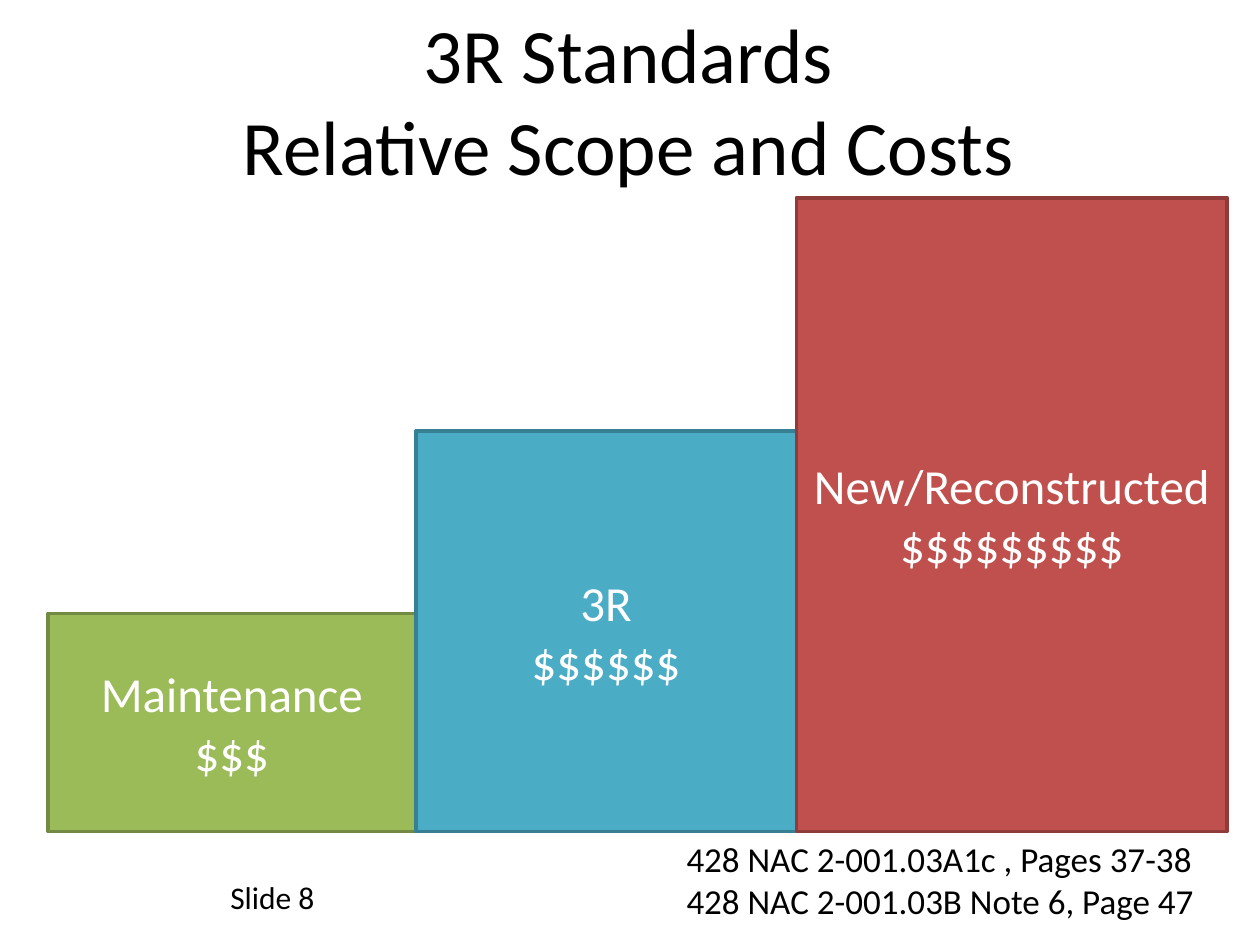
from dataclasses import dataclass

from pptx import Presentation
from pptx.dml.color import RGBColor
from pptx.enum.shapes import MSO_SHAPE
from pptx.enum.text import MSO_ANCHOR, MSO_AUTO_SIZE, PP_ALIGN
from pptx.util import Inches, Pt

RECT = MSO_SHAPE.RECTANGLE
MIDDLE, TOP = MSO_ANCHOR.MIDDLE, MSO_ANCHOR.TOP
CENTER, LEFT = PP_ALIGN.CENTER, PP_ALIGN.LEFT
NO_FIT, GROW = MSO_AUTO_SIZE.NONE, MSO_AUTO_SIZE.SHAPE_TO_FIT_TEXT

BLACK = RGBColor(0x00, 0x00, 0x00)
WHITE = RGBColor(0xFF, 0xFF, 0xFF)
GREEN = RGBColor(0x9B, 0xBB, 0x59)
DARK_GREEN = RGBColor(0x73, 0x8A, 0x42)
TEAL = RGBColor(0x4B, 0xAC, 0xC6)
DARK_TEAL = RGBColor(0x37, 0x7F, 0x92)
RED = RGBColor(0xC0, 0x50, 0x4D)
DARK_RED = RGBColor(0x8E, 0x3B, 0x39)

FONT = "Calibri"
BARS_LEFT = 0.38
BASELINE = 6.6


@dataclass
class Bar:
    label: str
    dollars: int
    width: float
    height: float
    fill: RGBColor
    line: RGBColor


@dataclass
class Note:
    text: str
    left: float
    top: float
    width: float
    height: float
    size: int


BARS = [
    Bar("Maintenance", 3, 2.92, 1.73, GREEN, DARK_GREEN),
    Bar("3R", 6, 3.02, 3.18, TEAL, DARK_TEAL),
    Bar("New/Reconstructed", 9, 3.42, 5.03, RED, DARK_RED),
]
NOTES = [
    Note("Slide 8", 1.73, 6.92, 1.24, 0.4, 18),
    Note("428 NAC 2-001.03A1c , Pages 37-38\n428 NAC 2-001.03B Note 6, Page 47",
         5.35, 6.6, 4.65, 0.77, 20),
]


def write(sp, text: str, *, size: int, color: RGBColor = BLACK,
          align=LEFT, anchor=TOP, fit=NO_FIT) -> None:
    tf = sp.text_frame
    tf.word_wrap = True
    tf.auto_size = fit
    tf.vertical_anchor = anchor
    tf.text = text
    for p in tf.paragraphs:
        p.alignment = align
        p.font.size = Pt(size)
        for r in p.runs:
            r.font.name = FONT
            r.font.size = Pt(size)
            r.font.color.rgb = color


def add_title(s, text: str) -> None:
    sp = s.shapes.title
    sp.left, sp.top = Inches(0.25), Inches(0)
    sp.width, sp.height = Inches(9.48), Inches(1.57)
    write(sp, text, size=44, align=CENTER, anchor=MIDDLE)


def add_bar(s, bar: Bar, left: float) -> None:
    sp = s.shapes.add_shape(RECT, Inches(left), Inches(BASELINE - bar.height),
                            Inches(bar.width), Inches(bar.height))
    sp.shadow.inherit = False
    sp.fill.solid()
    sp.fill.fore_color.rgb = bar.fill
    sp.line.color.rgb = bar.line
    sp.line.width = Pt(2)
    write(sp, f"{bar.label}\n{'$' * bar.dollars}", size=28, color=WHITE,
          align=CENTER, anchor=MIDDLE)


def add_note(s, note: Note) -> None:
    sp = s.shapes.add_textbox(Inches(note.left), Inches(note.top),
                              Inches(note.width), Inches(note.height))
    write(sp, note.text, size=note.size, fit=GROW)


def main() -> None:
    prs = Presentation()
    prs.slide_width, prs.slide_height = Inches(10), Inches(7.5)
    s = prs.slides.add_slide(prs.slide_layouts.get_by_name("Title Only"))
    add_title(s, "3R Standards\vRelative Scope and Costs")
    left = BARS_LEFT
    for bar in BARS:
        add_bar(s, bar, left)
        left += bar.width
    for note in NOTES:
        add_note(s, note)
    prs.save("out.pptx")


if __name__ == "__main__":
    main()
